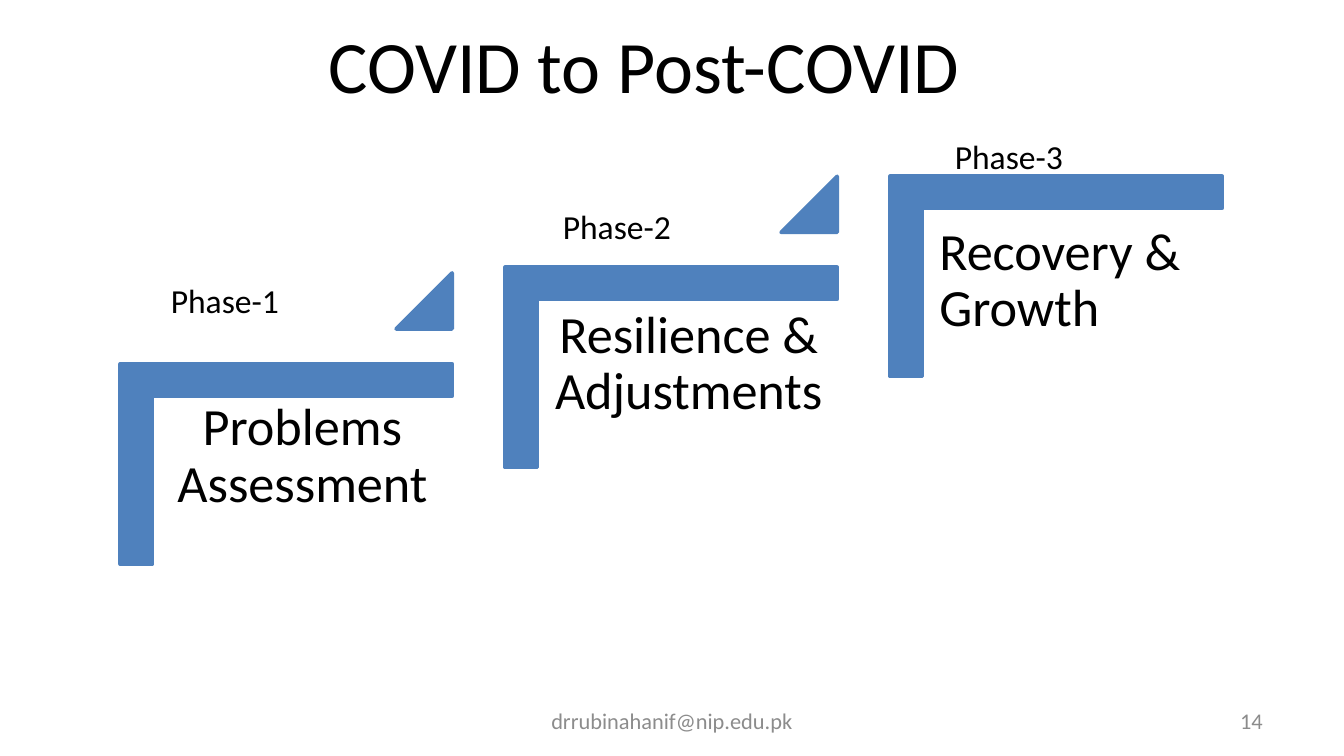
from pptx import Presentation
from pptx import util as u
from pptx.dml.color import RGBColor
from pptx.enum import shapes, text

PX = 9525  # EMU in one px, 96 px to the inch
HUES = {"ink": "000000", "step": "4F81BD", "foot": "8C8C8C"}
ALIGN = text.PP_ALIGN
ANCHOR = text.MSO_ANCHOR
FORM = shapes.MSO_SHAPE


def write(words, box, hold=None, size=18, hue="ink", align=ALIGN.LEFT,
          anchor=ANCHOR.TOP, pad=(10, 5), space=1.0):
    """Set one paragraph in a placeholder, or in a new text box."""
    area = [n * PX for n in box]
    if hold is None:
        hold = slide.shapes.add_textbox(*area)
    else:
        hold.left, hold.top, hold.width, hold.height = area
    frame = hold.text_frame
    frame.word_wrap = True
    frame.auto_size = text.MSO_AUTO_SIZE.NONE
    frame.vertical_anchor = anchor
    frame.margin_left = frame.margin_right = pad[0] * PX
    frame.margin_top = frame.margin_bottom = pad[1] * PX
    para = frame.paragraphs[0]
    para.alignment = align
    para.line_spacing = space
    run = para.add_run()
    run.text = words
    run.font.size = u.Pt(size)
    run.font.name = "Calibri"
    run.font.color.rgb = RGBColor.from_string(HUES[hue])


def draw(form, box, ratios, turn=0):
    """Add a solid shape in the step colour."""
    item = slide.shapes.add_shape(form, *[n * PX for n in box])
    for i, ratio in enumerate(ratios):
        item.adjustments[i] = ratio
    item.rotation = turn
    item.shadow.inherit = False
    tone = RGBColor.from_string(HUES["step"])
    item.fill.solid()
    item.fill.fore_color.rgb = tone
    item.line.color.rgb = tone
    item.line.width = u.Pt(2)


deck = Presentation()
deck.slide_width, deck.slide_height = 960 * PX, 540 * PX
slide = deck.slides.add_slide(deck.slide_layouts[5])

write("COVID to Post-COVID", (8, 22, 904, 48), hold=slide.shapes.title,
      size=39.6, align=ALIGN.CENTER, anchor=ANCHOR.MIDDLE)

# Each step: name, top of bracket, text box, alignment, top of phase label
steps = [
    ("Problems Assessment", 260, (96, 275, 240, 207), ALIGN.CENTER, 195),
    ("Resilience & Adjustments", 191, (385, 209, 214, 198), ALIGN.CENTER, 142),
    ("Recovery & Growth", 126, (660, 150, 214, 188), ALIGN.LEFT, 92),
]
wide, high = 237, 143
shift = (wide - high) // 2  # the bracket is turned about its centre

for i, (name, top, box, align, rise) in enumerate(steps):
    left = 86 + 275 * i
    draw(FORM.CORNER, (left + shift, top - shift, high, wide),
         (0.16, 0.16), turn=90)
    if i < len(steps) - 1:
        draw(FORM.ISOSCELES_TRIANGLE, (left + 197, top - 65, 40, 40), (1,))
    write(name, box, size=28, align=align, pad=(11, 11), space=0.9)
    write(f"Phase-{i + 1}", (112 + 280 * i, rise, 140, 38))

write("drrubinahanif@nip.edu.pk", (328, 500, 304, 29), size=12, hue="foot",
      align=ALIGN.CENTER, anchor=ANCHOR.MIDDLE)
write("14", (688, 500, 224, 29), size=12, hue="foot",
      align=ALIGN.RIGHT, anchor=ANCHOR.MIDDLE)

deck.save("out.pptx")
